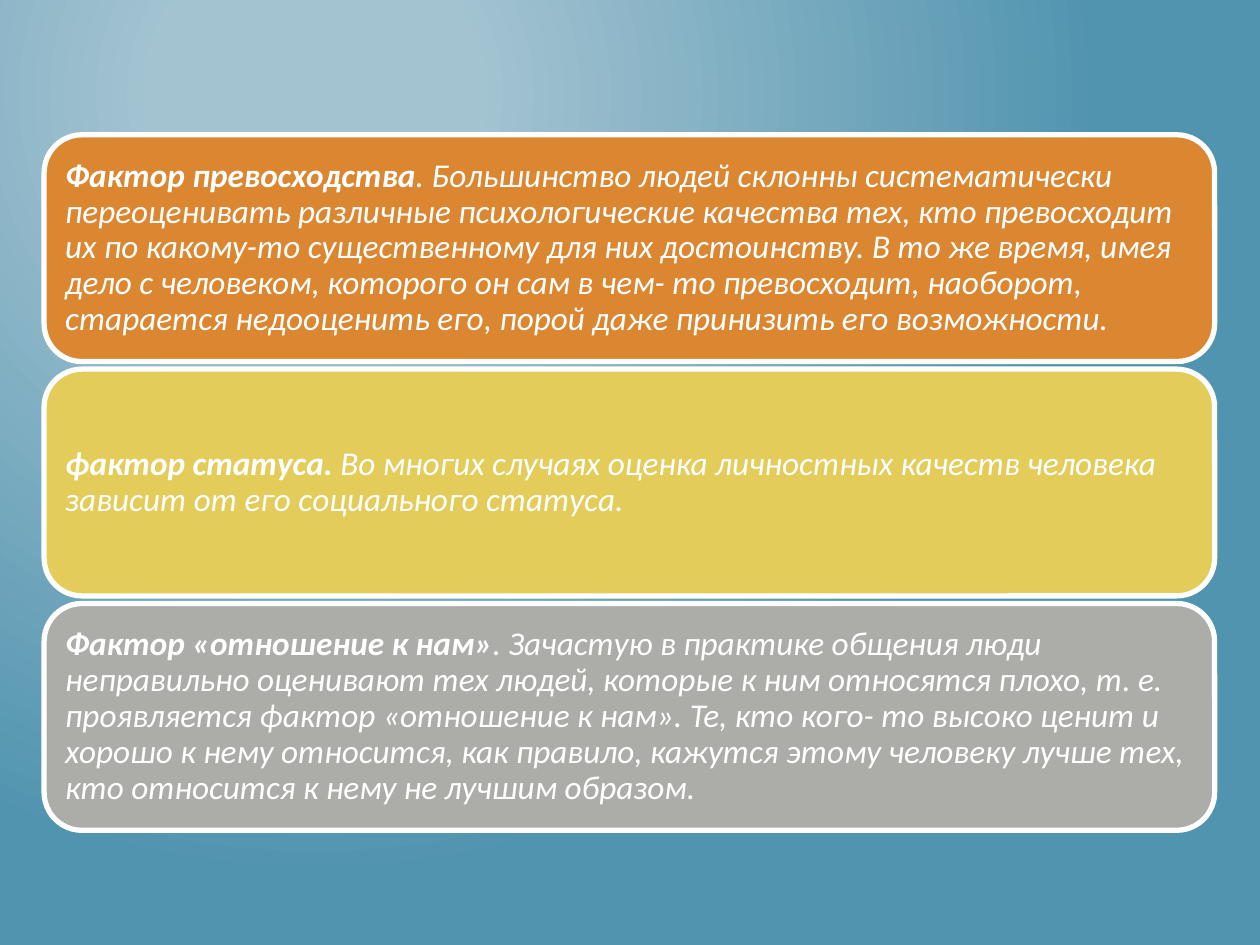
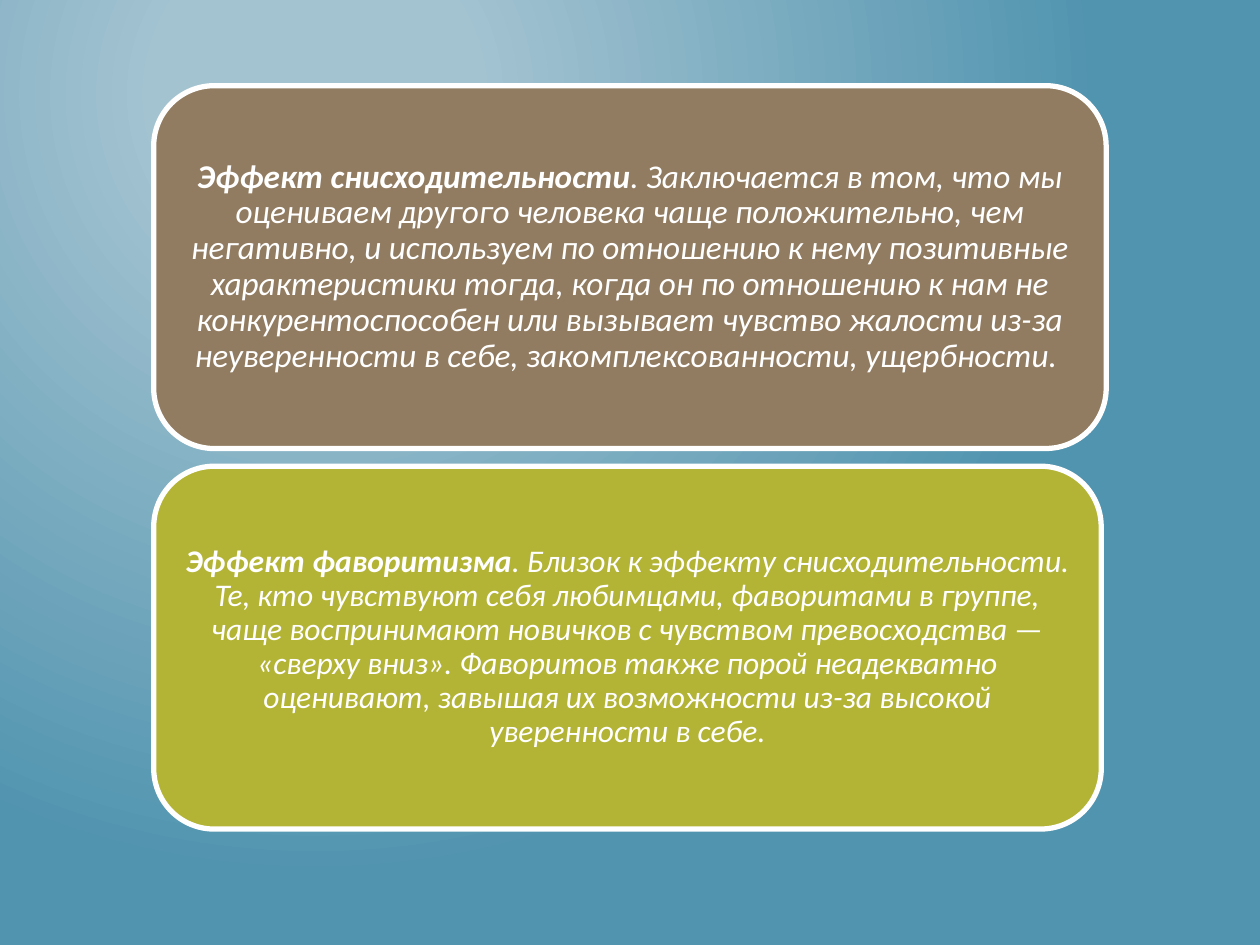
from lxml import etree
from pptx import Presentation
from pptx.dml.color import RGBColor
from pptx.enum.shapes import MSO_SHAPE
from pptx.enum.text import MSO_ANCHOR, PP_ALIGN
from pptx.oxml.ns import qn
from pptx.util import Inches, Pt

ROUNDED = MSO_SHAPE.ROUNDED_RECTANGLE
MIDDLE = MSO_ANCHOR.MIDDLE
LEFT, CENTER = PP_ALIGN.LEFT, PP_ALIGN.CENTER

WHITE = RGBColor(0xFF, 0xFF, 0xFF)
PALE_BLUE = RGBColor(0xA3, 0xC3, 0xD1)
DEEP_BLUE = RGBColor(0x51, 0x94, 0xAF)
ORANGE = RGBColor(0xDB, 0x86, 0x31)
YELLOW = RGBColor(0xE3, 0xCC, 0x5A)
GRAY = RGBColor(0xAC, 0xAD, 0xA8)
BROWN = RGBColor(0x92, 0x7C, 0x61)
OLIVE = RGBColor(0xB3, 0xB4, 0x35)

FONT = "Calibri"
GLOW_STOPS = [(0.2, PALE_BLUE), (1.0, DEEP_BLUE)]
GLOW_FOCUS = {"l": "50000", "t": "20000", "r": "100000", "b": "100000"}

# Lengths in inches; each card: fill, width, font size, heading, body
SLIDES = [
    {
        "left": 0.35, "top": 1.07, "height": 1.8, "gap": 0.06,
        "align": LEFT, "side_inset": 0.08, "end_inset": 0.08,
        "cards": [
            (ORANGE, 9.29, 19, "Фактор превосходства",
             ". Большинство людей склонны систематически переоценивать различные "
             "психологические качества тех, кто превосходит их по какому-то "
             "существенному для них достоинству. В то же время, имея дело с "
             "человеком, которого он сам в чем- то превосходит, наоборот, старается "
             "недооценить его, порой даже принизить его возможности."),
            (YELLOW, 9.29, 19, "фактор статуса.",
             " Во многих случаях оценка личностных качеств человека зависит от его "
             "социального статуса."),
            (GRAY, 9.29, 19, "Фактор «отношение к нам»",
             ". Зачастую в практике общения люди неправильно оценивают тех людей, "
             "которые к ним относятся плохо, т. е. проявляется фактор «отношение к "
             "нам». Те, кто кого- то высоко ценит и хорошо к нему относится, как "
             "правило, кажутся этому человеку лучше тех, кто относится к нему не "
             "лучшим образом."),
        ],
    },
    {
        "left": 1.22, "top": 0.68, "height": 2.88, "gap": 0.14,
        "align": CENTER, "side_inset": 0.08, "end_inset": 0.04,
        "cards": [
            (BROWN, 7.56, 19, "Эффект снисходительности",
             ". Заключается в том, что мы оцениваем другого человека чаще "
             "положительно, чем негативно, и используем по отношению к нему "
             "позитивные характеристики тогда, когда он по отношению к нам не "
             "конкурентоспособен или вызывает чувство жалости из-за неуверенности "
             "в себе, закомплексованности, ущербности. "),
            (OLIVE, 7.52, 18, "Эффект фаворитизма",
             ". Близок к эффекту снисходительности. Те, кто чувствуют себя "
             "любимцами, фаворитами в группе, чаще воспринимают новичков с чувством "
             "превосходства — «сверху вниз». Фаворитов также порой неадекватно "
             "оценивают, завышая их возможности из-за высокой уверенности в себе."),
        ],
    },
]


def set_glow_background(master):
    """Give the master a circular gradient that every slide inherits."""
    fill = master.background.fill
    fill.gradient()
    for stop, (position, color) in zip(fill.gradient_stops, GLOW_STOPS):
        stop.position = position
        stop.color.rgb = color
    gradient = master.element.find(".//" + qn("a:gradFill"))
    linear = gradient.find(qn("a:lin"))
    circle = etree.Element(qn("a:path"), {"path": "circle"})
    etree.SubElement(circle, qn("a:fillToRect"), GLOW_FOCUS)
    gradient.replace(linear, circle)


def add_card(slide, layout, top, card):
    color, width, size, heading, body = card
    shape = slide.shapes.add_shape(
        ROUNDED, Inches(layout["left"]), Inches(top),
        Inches(width), Inches(layout["height"]))
    shape.shadow.inherit = False
    shape.fill.solid()
    shape.fill.fore_color.rgb = color
    shape.line.color.rgb = WHITE
    shape.line.width = Pt(3)

    frame = shape.text_frame
    frame.word_wrap = True
    frame.vertical_anchor = MIDDLE
    frame.margin_left = frame.margin_right = Inches(layout["side_inset"])
    frame.margin_top = frame.margin_bottom = Inches(layout["end_inset"])

    paragraph = frame.paragraphs[0]
    paragraph.alignment = layout["align"]
    paragraph.line_spacing = 0.9
    paragraph.font.name = FONT
    paragraph.font.size = Pt(size)
    paragraph.font.italic = True
    paragraph.font.color.rgb = WHITE
    for text, bold in ((heading, True), (body, False)):
        run = paragraph.add_run()
        run.text = text
        run.font.bold = bold


def main():
    presentation = Presentation()
    presentation.slide_width = Inches(10)
    presentation.slide_height = Inches(7.5)
    set_glow_background(presentation.slide_master)
    blank = presentation.slide_layouts[6]
    for layout in SLIDES:
        slide = presentation.slides.add_slide(blank)
        step = layout["height"] + layout["gap"]
        for index, card in enumerate(layout["cards"]):
            add_card(slide, layout, layout["top"] + index * step, card)
    presentation.save("out.pptx")


if __name__ == "__main__":
    main()
